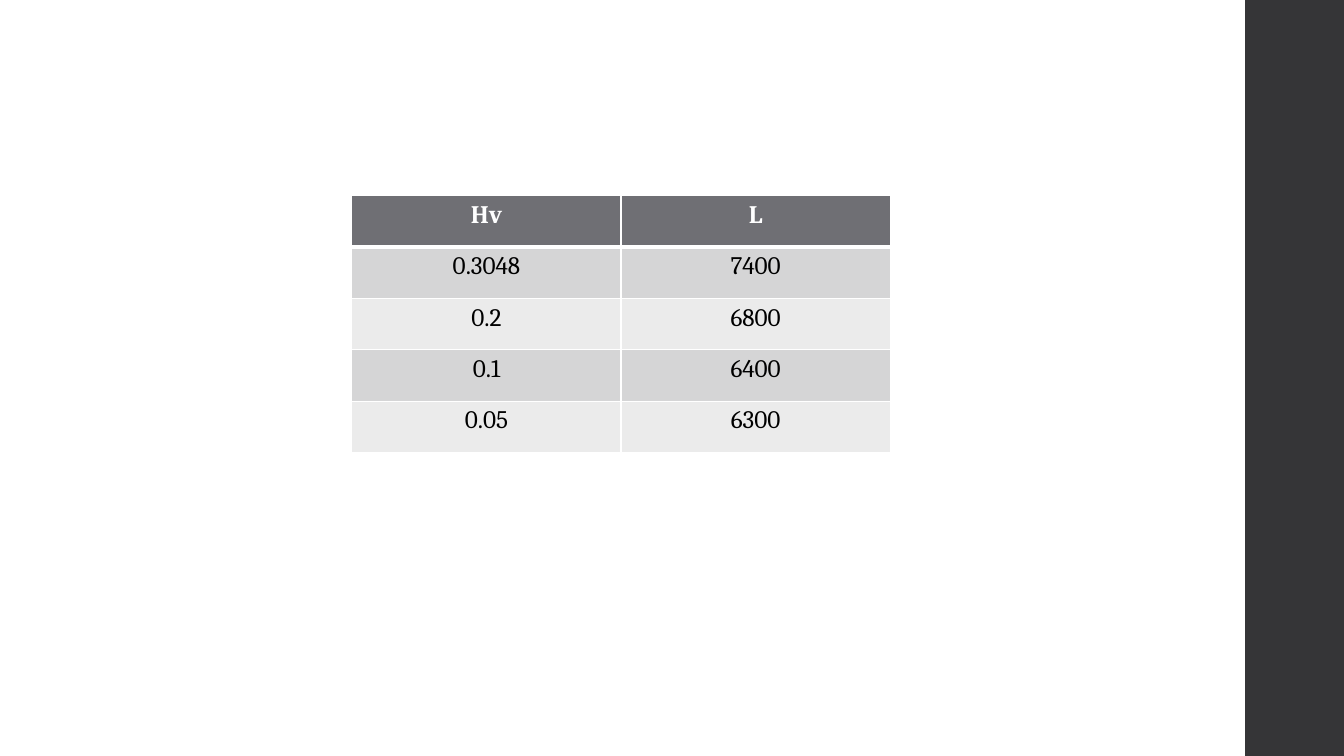
from dataclasses import dataclass

from lxml.etree import SubElement
from pptx import Presentation
from pptx.dml.color import RGBColor
from pptx.enum.shapes import MSO_SHAPE
from pptx.enum.text import PP_ALIGN
from pptx.oxml.ns import qn
from pptx.slide import Slide
from pptx.table import _Cell
from pptx.util import Inches, Pt

SLIDE_WIDTH, SLIDE_HEIGHT = Inches(13.33), Inches(7.5)
SIDEBAR_WIDTH = Inches(0.98)
TABLE_LEFT, TABLE_TOP = Inches(3.49), Inches(1.94)
COLUMN_WIDTH, ROW_HEIGHT = Inches(2.67), Inches(0.51)
WHITE = "FFFFFF"
THIN, THICK = 1, 3


@dataclass(frozen=True)
class RowStyle:
    fill: str
    text: str
    bold: bool = False


HEADER = RowStyle("6F6F74", WHITE, bold=True)
BANDS = (RowStyle("D5D5D6", "000000"), RowStyle("EBEBEB", "000000"))

VALUES = (
    ("Hv", "L"),
    ("0.3048", "7400"),
    ("0.2", "6800"),
    ("0.1", "6400"),
    ("0.05", "6300"),
)


def color(value: str) -> RGBColor:
    return RGBColor.from_string(value)


def add_sidebar(slide: Slide) -> None:
    sidebar = slide.shapes.add_shape(
        MSO_SHAPE.RECTANGLE, SLIDE_WIDTH - SIDEBAR_WIDTH, 0, SIDEBAR_WIDTH, SLIDE_HEIGHT
    )
    sidebar.shadow.inherit = False
    sidebar.fill.solid()
    sidebar.fill.fore_color.rgb = color("353537")
    sidebar.line.fill.background()


def set_borders(cell: _Cell, top: int, bottom: int) -> None:
    """Draw white borders; call before filling, as lines precede the fill in the XML."""
    properties = cell._tc.get_or_add_tcPr()
    widths = {"a:lnL": THIN, "a:lnR": THIN, "a:lnT": top, "a:lnB": bottom}
    for tag, width in widths.items():
        line = SubElement(properties, qn(tag), w=str(Pt(width)))
        fill = SubElement(line, qn("a:solidFill"))
        SubElement(fill, qn("a:srgbClr"), val=WHITE)


def format_cell(cell: _Cell, text: str, style: RowStyle) -> None:
    cell.fill.solid()
    cell.fill.fore_color.rgb = color(style.fill)
    paragraph = cell.text_frame.paragraphs[0]
    paragraph.alignment = PP_ALIGN.CENTER
    run = paragraph.add_run()
    run.text = text
    run.font.name = "Cambria"
    run.font.size = Pt(18)
    run.font.bold = style.bold
    run.font.color.rgb = color(style.text)


def add_value_table(slide: Slide) -> None:
    row_count, column_count = len(VALUES), len(VALUES[0])
    table = slide.shapes.add_table(
        row_count, column_count, TABLE_LEFT, TABLE_TOP,
        COLUMN_WIDTH * column_count, ROW_HEIGHT * row_count,
    ).table
    for row_index, values in enumerate(VALUES):
        style = HEADER if row_index == 0 else BANDS[(row_index - 1) % len(BANDS)]
        top = THICK if row_index == 1 else THIN
        bottom = THICK if row_index == 0 else THIN
        for column_index, text in enumerate(values):
            cell = table.cell(row_index, column_index)
            set_borders(cell, top, bottom)
            format_cell(cell, text, style)


def main() -> None:
    presentation = Presentation()
    presentation.slide_width, presentation.slide_height = SLIDE_WIDTH, SLIDE_HEIGHT
    slide = presentation.slides.add_slide(presentation.slide_layouts[6])
    add_sidebar(slide)
    add_value_table(slide)
    presentation.save("out.pptx")


if __name__ == "__main__":
    main()
